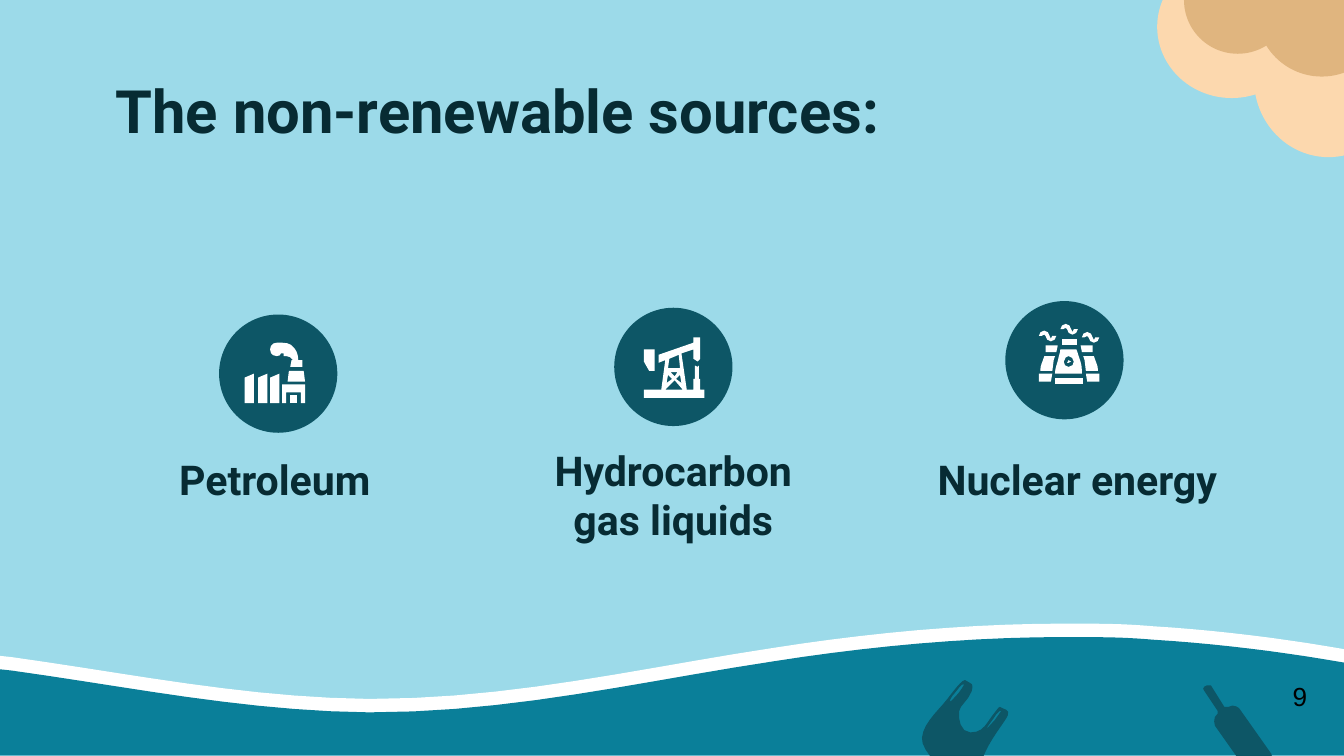
"""Build the slide that lists the non-renewable energy sources."""
from dataclasses import dataclass
from math import ceil, dist

from pptx import Presentation, util as u
from pptx.dml.color import RGBColor
from pptx.enum import shapes, text

PX = 9144


@dataclass(frozen=True)
class Theme:
    sky: str = "9CDAE9"
    foam: str = "FFFFFF"
    sea: str = "0A7F99"
    deep: str = "0D5666"
    sand: str = "FCD8AE"
    earth: str = "E0B57F"
    ink: str = "072B33"
    black: str = "000000"
    face: str = "Roboto"
    plain: str = "Arial"
    head: int = 32
    label: int = 22
    small: int = 14


T = Theme()

WAVE = ("M 793 464 C 720 464 646 471 576 482 477 497 381 520 277 520 "
        "L 273 520 C 182 519 96 501 9 489 L 0 488 0 552 1000 552 1000 483 "
        "C 954 475 907 469 858 466 837 464 815 464 793 464")
BOTTLE = ("M 899 510 L 898 510 896 511 C 895 512 895 513 896 514 L 906 529 "
          "906 531 C 903 533 903 537 904 540 L 928 574 931 575 933 574 945 566 "
          "C 947 565 947 563 946 561 L 922 527 C 921 526 919 525 917 525 "
          "L 914 526 911 526 901 510")
BAG = ("M 717 509 C 718 509 716 512 713 516 710 519 708 522 707 522 706 522 708 518 711 515 "
       "714 511 716 509 717 509 "
       "M 744 529 L 745 529 C 745 529 743 532 740 536 737 539 735 542 734 542 "
       "734 542 736 539 739 535 741 531 744 529 744 529 "
       "M 718 506 C 716 506 711 512 705 520 698 529 687 538 686 549 685 559 705 578 714 578 "
       "L 715 578 C 723 578 729 570 733 560 737 550 750 534 750 532 "
       "751 529 749 528 746 527 L 744 526 C 743 526 742 528 738 533 "
       "733 540 731 545 722 545 713 545 712 529 715 526 727 513 723 509 723 509 "
       "723 509 720 507 718 506")

BAR = "M 189 278 L 182 281 182 300 189 300"
PLANT = (
    "M 216 294 L 216 300 221 300 221 294",
    "M 210 286 L 210 300 213 300 213 292 224 292 224 300 227 300 227 286",
    "M 206 255 C 203 255 201 257 201 260 201 263 203 265 206 265 208 265 209 264 209 263 "
    "L 211 263 211 265 213 265 C 215 265 217 266 218 268 "
    "L 217 268 216 273 225 273 225 268 222 268 C 222 265 221 261 219 259 217 256 214 255 210 255",
    "M 215 276 L 214 284 227 284 226 276",
)
PUMP = (
    "M 479 260 L 479 269 483 276 487 276 487 260",
    "M 505 264 L 506 274 497 274 498 267 M 504 277 L 502 280 499 277 "
    "M 506 279 L 507 285 503 282 M 497 279 L 500 282 496 285 M 502 283 L 508 290 495 290 "
    "M 516 251 L 516 255 490 264 490 270 495 268 492 290 479 290 479 296 524 296 524 290 "
    "521 290 521 282 520 282 520 272 519 273 517 272 517 282 516 282 516 290 511 290 507 263 "
    "516 260 516 267 519 269 521 267 521 251",
)
STEAM = ("M 793 241 C 791 241 789 243 789 245 L 791 245 793 244 794 245 "
         "C 794 247 796 249 798 249 800 249 802 247 802 245 L 799 245 "
         "798 247 797 245 C 797 243 795 241 793 241")
TOWER = (
    "M 777 265 L 776 268 C 775 271 774 272 774 276 L 783 276 784 268 785 265",
    "M 773 278 L 773 284 782 284 783 278",
    "M 778 257 L 778 262 786 262 787 257",
)
CORE = (
    "M 795 268 L 794 270 795 270 797 269",
    "M 785 281 L 785 286 806 286 806 281",
    "M 790 252 L 790 257 801 257 801 252",
    "M 795 265 C 797 265 799 267 799 269 799 271 798 273 795 273 792 273 790 269 793 266 "
    "L 795 265 M 789 260 C 789 263 788 263 787 269 786 272 785 275 785 278 L 805 278 "
    "C 805 275 805 272 804 269 802 263 802 263 801 260",
)


def px(*nums):
    """Turn px lengths into EMU."""
    return [u.Emu(round(n * PX)) for n in nums]


def paint(shape, color):
    """Give a shape a flat fill with no line and no shadow."""
    shape.shadow.inherit = False
    shape.fill.solid()
    shape.fill.fore_color.rgb = RGBColor.from_string(color)
    shape.line.fill.background()


def curve(a, b, c, d):
    """Return a few points along a cubic curve, more for a longer one."""
    steps = min(10, ceil(dist(a, d) / 6) + (dist(a, d) > 2.5))
    rows = []
    for n in range(1, steps + 1):
        t = n / steps
        s = 1 - t
        rows.append(tuple(s**3 * i + 3 * s * s * t * j + 3 * s * t * t * k + t**3 * m
                          for i, j, k, m in zip(a, b, c, d)))
    return rows


def trace(path):
    """Turn a path of M, L and C parts into closed rings of points."""
    rings, mode, nums = [], "", []
    for word in path.split():
        if word.isalpha():
            mode = word
            continue
        nums.append(int(word))
        if len(nums) < (6 if mode == "C" else 2):
            continue
        pts = list(zip(nums[::2], nums[1::2]))
        nums = []
        if mode == "M":
            rings.append(pts)
        else:
            rings[-1].extend(curve(rings[-1][-1], *pts) if mode == "C" else pts)
    return rings


def draw(tree, path, color, dx=0, dy=0, flip=None):
    """Add a path as a filled outline, moved or mirrored."""
    pen = None
    for ring in trace(path):
        pts = [px((x if flip is None else flip - x) + dx, y + dy) for x, y in ring]
        if pen is None:
            pen = tree.build_freeform(*pts[0], scale=1.0)
        else:
            pen.move_to(*pts[0])
        pen.add_line_segments(pts[1:], close=True)
    paint(pen.convert_to_shape(), color)


def disc(tree, box, color):
    """Add a filled ellipse."""
    paint(tree.add_shape(shapes.MSO_SHAPE.OVAL, *px(*box)), color)


def write(shape, box, words, size, color=T.ink, face=T.face, bold=True,
          align=text.PP_ALIGN.LEFT, anchor=text.MSO_ANCHOR.MIDDLE):
    """Place a text shape and fill it with one run."""
    shape.left, shape.top, shape.width, shape.height = px(*box)
    frame = shape.text_frame
    frame.word_wrap = True
    frame.auto_size = text.MSO_AUTO_SIZE.NONE
    frame.vertical_anchor = anchor
    frame.margin_left = frame.margin_right = frame.margin_top = frame.margin_bottom = px(10)[0]
    para = frame.paragraphs[0]
    para.alignment = align
    run = para.add_run()
    run.text = words
    run.font.size, run.font.bold, run.font.name = u.Pt(size), bold, face
    run.font.color.rgb = RGBColor.from_string(color)


def scene(tree):
    """Draw the sea, its litter and the clouds."""
    draw(tree, WAVE, T.foam)
    draw(tree, WAVE, T.sea, dy=10)
    draw(tree, BOTTLE, T.deep)
    draw(tree, BAG, T.deep)
    for box in ((933, 1, 111, 116), (861, -33, 111, 106), (940, -12, 97, 97)):
        disc(tree, box, T.sand)
    for box in ((881, -40, 80, 80), (935, -40, 97, 97)):
        disc(tree, box, T.earth)


def icons(slide):
    """Draw the white plant, pump and tower icons."""
    plant, pump, tower = (slide.shapes.add_group_shape().shapes for _ in range(3))
    for dx in (0, 10, 19):
        draw(plant, BAR, T.foam, dx)
    for dx, dy in ((0, 0), (16, 6), (-16, 5)):
        draw(tower, STEAM, T.foam, dx, dy)
    for path in TOWER:
        draw(tower, path, T.foam)
        draw(tower, path, T.foam, flip=1591)
    for tree, paths in ((plant, PLANT), (pump, PUMP), (tower, CORE)):
        for path in paths:
            draw(tree, path, T.foam)


def main():
    """Build and save the slide."""
    deck = Presentation()
    deck.slide_width, deck.slide_height = px(1000, 562.5)
    slide = deck.slides.add_slide(deck.slide_layouts[5])
    slide.background.fill.solid()
    slide.background.fill.fore_color.rgb = RGBColor.from_string(T.sky)
    scene(slide.shapes.add_group_shape().shapes)
    write(slide.shapes.title, (76, 45, 673, 105), "The non-renewable sources:", T.head,
          anchor=text.MSO_ANCHOR.TOP)
    for words, spot, box in (
            ("Petroleum", (163, 234), (106, 336, 197, 41)),
            ("Hydrocarbon gas liquids", (457, 229), (376, 336, 250, 64)),
            ("Nuclear energy", (748, 224), (674, 336, 255, 41))):
        disc(slide.shapes, (*spot, 88, 88), T.deep)
        write(slide.shapes.add_textbox(0, 0, 0, 0), box, words, T.label,
              align=text.PP_ALIGN.CENTER)
    icons(slide)
    write(slide.shapes.add_textbox(0, 0, 0, 0), (952, 488, 47, 60), "9", T.small,
          T.black, T.plain, False)
    deck.save("out.pptx")


if __name__ == "__main__":
    main()
